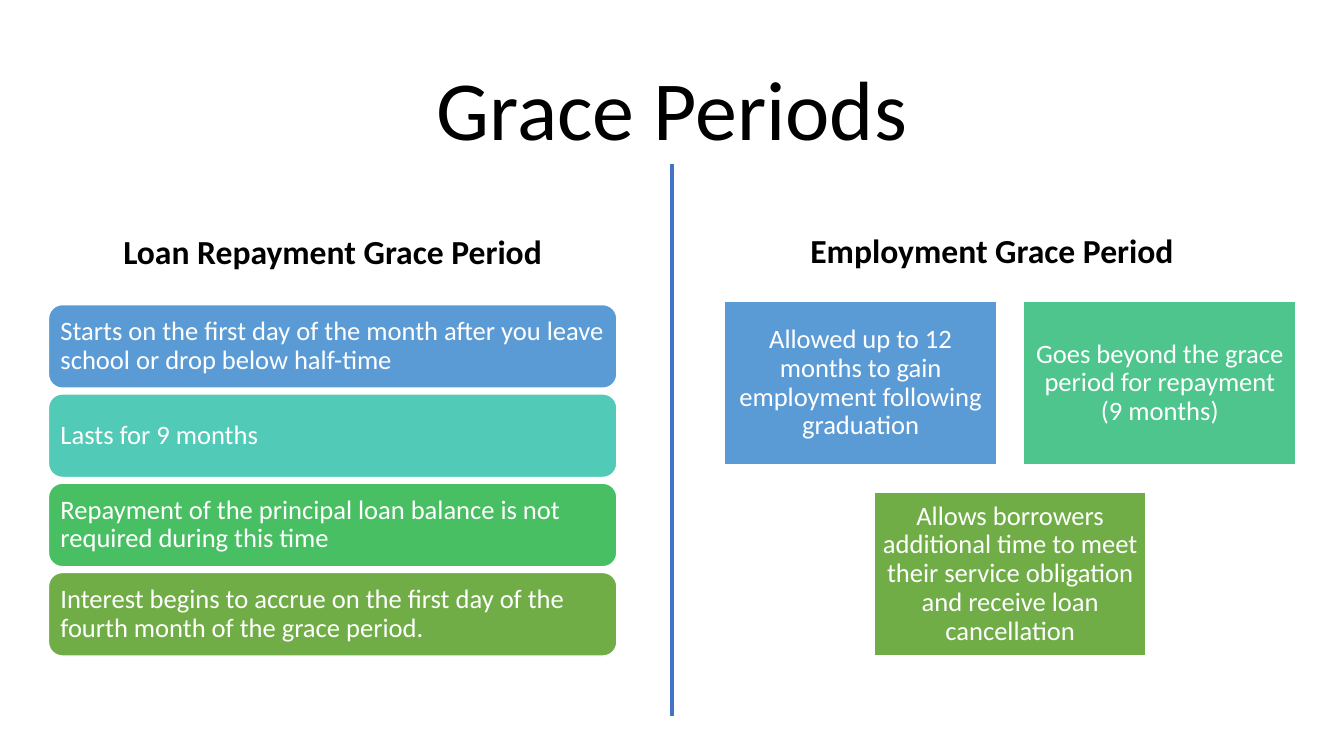
from dataclasses import dataclass
from pptx import Presentation
from pptx.dml.color import RGBColor as RGB
from pptx.enum.shapes import MSO_CONNECTOR as Link, MSO_SHAPE as Kind
from pptx.enum.text import MSO_ANCHOR as Anchor, PP_ALIGN as Align
from pptx.oxml.xmlchemy import OxmlElement as Node
from pptx.util import Pt


@dataclass(frozen=True)
class Theme:
    """Colours, font and type sizes of the slide."""
    font: str = "Calibri"
    ink: str = "000000"
    white: str = "FFFFFF"
    rule: str = "4472C4"
    bars: tuple = ("5B9BD5", "52CAB8", "49BF64", "70AD47")
    tiles: tuple = ("5B9BD5", "4DC58D", "70AD47")
    title: int = 60
    head: int = 24
    body: int = 19


LOOK = Theme()
LOAN = (
    "Starts on the first day of the month after you leave school or drop below half-time ",
    "Lasts for 9 months",
    "Repayment of the principal loan balance is not required during this time ",
    "Interest begins to accrue on the first day of the fourth month of the grace period.",
)
WORK = (
    "Allowed up to 12 months to gain employment following graduation",
    "Goes beyond the grace period for repayment (9 months)",
    "Allows borrowers additional time to meet their service obligation and receive loan cancellation",
)


def write(shape, text, size, color=LOOK.ink, bold=False, align=Align.CENTER,
          anchor=Anchor.MIDDLE, pad=(7.2, 3.6)):
    """Put formatted text in a shape."""
    frame = shape.text_frame
    frame.word_wrap = True
    frame.vertical_anchor = anchor
    frame.margin_left = frame.margin_right = Pt(pad[0])
    frame.margin_top = frame.margin_bottom = Pt(pad[1])
    para = frame.paragraphs[0]
    para.alignment = align
    para.line_spacing = 0.9
    run = para.add_run()
    run.text = text
    font = run.font
    font.name, font.size, font.bold = LOOK.font, Pt(size), bold
    font.color.rgb = RGB.from_string(color)


def label(slide, box, text, size, **form):
    """Add a text box."""
    write(slide.shapes.add_textbox(*map(Pt, box)), text, size, **form)


def panel(slide, kind, box, fill, text, align):
    """Add a filled shape with white text."""
    shape = slide.shapes.add_shape(kind, *map(Pt, box))
    shape.shadow.inherit = False
    shape.fill.solid()
    shape.fill.fore_color.rgb = RGB.from_string(fill)
    shape.line.color.rgb = RGB.from_string(LOOK.white)
    shape.line.width = Pt(1)
    write(shape, text, LOOK.body, color=LOOK.white, align=align, pad=(5.7, 5.7))


def stack(slide, box, gap=4.1):
    """Fill the box with equal rounded bars."""
    left, top, wide, high = box
    tall = (high - gap * (len(LOAN) - 1)) / len(LOAN)
    for row, (text, fill) in enumerate(zip(LOAN, LOOK.bars)):
        place = (left, top + row * (tall + gap), wide, tall)
        panel(slide, Kind.ROUNDED_RECTANGLE, place, fill, text, Align.LEFT)


def grid(slide, box, gap=19.4, cols=2):
    """Fill the box with two rows of tiles, centring a short row."""
    left, top, wide, high = box
    width, tall = (wide - gap) / cols, (high - gap) / 2
    for spot, (text, fill) in enumerate(zip(WORK, LOOK.tiles)):
        row, col = divmod(spot, cols)
        count = min(cols, len(WORK) - row * cols)
        shift = (cols - count) * (width + gap) / 2
        place = (left + shift + col * (width + gap),
                 top + row * (tall + gap), width, tall)
        panel(slide, Kind.RECTANGLE, place, fill, text, Align.CENTER)


def divide(slide, x, top, end):
    """Draw the upright rule between the columns."""
    line = slide.shapes.add_connector(Link.STRAIGHT, Pt(x), Pt(top), Pt(x), Pt(end))
    line.line.color.rgb = RGB.from_string(LOOK.rule)
    line.line.width = Pt(3)
    line._element.spPr.append(Node("a:effectLst"))


def main():
    """Build and save the slide."""
    deck = Presentation()
    deck.slide_width, deck.slide_height = Pt(960), Pt(540)
    slide = deck.slides.add_slide(deck.slide_layouts[6])
    head = dict(size=LOOK.head, bold=True, anchor=Anchor.BOTTOM)
    label(slide, (66, 28.8, 828, 104.4), "Grace Periods", LOOK.title)
    label(slide, (34.6, 133.2, 406, 64.8), "Loan Repayment Grace Period", **head)
    stack(slide, (34.6, 217.6, 406, 251))
    label(slide, (504.6, 132, 408, 64.8), "Employment Grace Period", **head)
    grid(slide, (517.6, 215.4, 408, 253))
    divide(slide, 480, 116.8, 511.2)
    deck.save("out.pptx")


if __name__ == "__main__":
    main()
